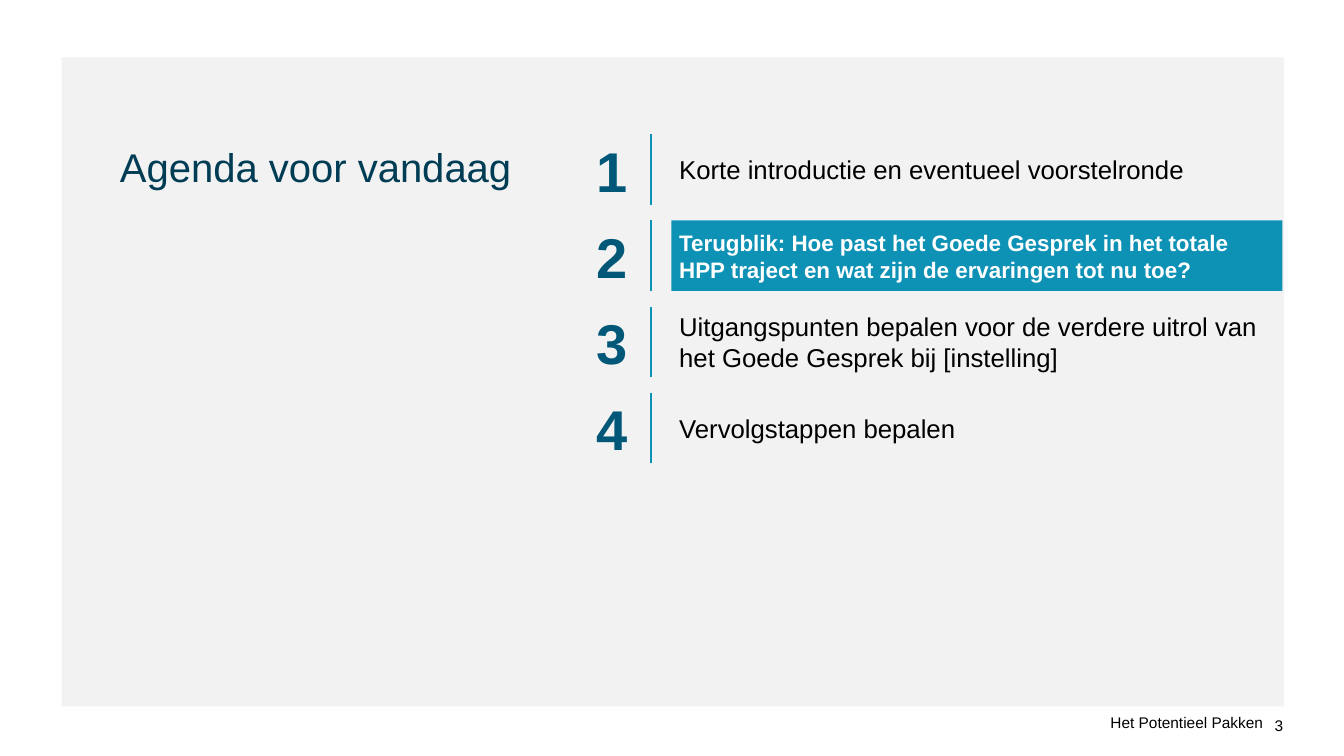
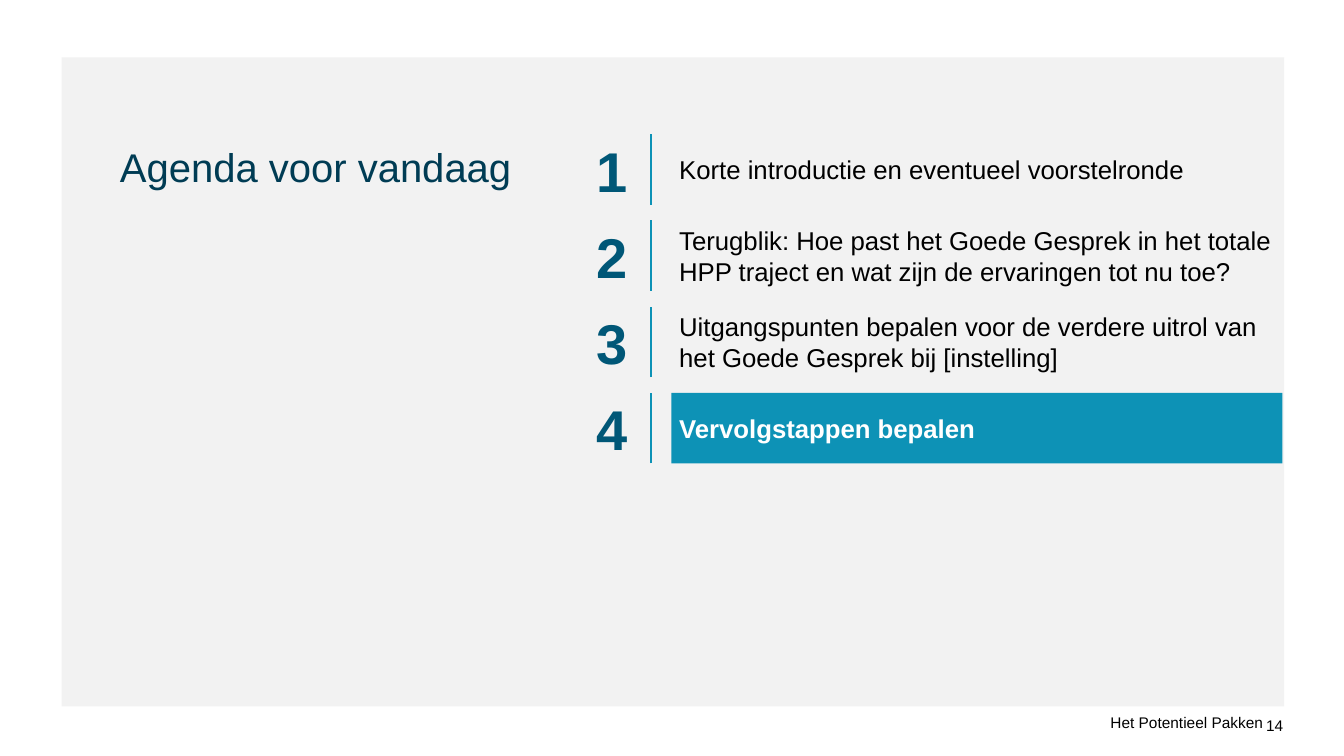
from pptx import Presentation
from pptx.dml.color import RGBColor
from pptx.enum.shapes import MSO_CONNECTOR, MSO_SHAPE
from pptx.enum.text import MSO_ANCHOR, MSO_AUTO_SIZE, PP_ALIGN
from pptx.oxml.ns import qn
from pptx.util import Pt
from lxml import etree

LEFT, CENTER, RIGHT = PP_ALIGN.LEFT, PP_ALIGN.CENTER, PP_ALIGN.RIGHT
TOP, MIDDLE, BOTTOM = MSO_ANCHOR.TOP, MSO_ANCHOR.MIDDLE, MSO_ANCHOR.BOTTOM
RECT, STRAIGHT = MSO_SHAPE.RECTANGLE, MSO_CONNECTOR.STRAIGHT
NO_FIT = MSO_AUTO_SIZE.NONE

FONT = "Arial"
COLORS = {"panel": "F2F2F2", "title": "003C54", "number": "005777",
          "accent": "0D92B6", "text": "000000", "active": "FFFFFF"}

ITEMS = [
    "Korte introductie en eventueel voorstelronde",
    "Terugblik: Hoe past het Goede Gesprek in het totale HPP traject "
    "en wat zijn de ervaringen tot nu toe?",
    "Uitgangspunten bepalen voor de verdere uitrol van het Goede Gesprek "
    "bij [instelling]",
    "Vervolgstappen bepalen",
]
# Page number, active item, size of the active text
PAGES = [("3", 2, 16), ("14", 4, 18.4)]

# Agenda rows
ROW_TOP, ROW_STEP, ROW_H = 95.9, 61.6, 50.3
NUM_X, NUM_W = 419.8, 35.3
LINE_X = 465.1
ITEM_X, ITEM_W = 479.5, 436.6


def write(shape, text, size, color, bold=False, align=LEFT, anchor=MIDDLE,
          inset=0, wrap=True):
    frame = shape.text_frame
    frame.auto_size = NO_FIT
    frame.word_wrap = wrap
    frame.vertical_anchor = anchor
    frame.margin_left = frame.margin_right = Pt(inset)
    frame.margin_top = frame.margin_bottom = Pt(inset)
    para = frame.paragraphs[0]
    para.alignment = align
    run = para.add_run()
    run.text = text
    run.font.name = FONT
    run.font.size = Pt(size)
    run.font.bold = bold
    run.font.color.rgb = RGBColor.from_string(COLORS[color])


def block(slide, x, y, w, h, fill):
    shape = slide.shapes.add_shape(RECT, Pt(x), Pt(y), Pt(w), Pt(h))
    shape.shadow.inherit = False
    shape.fill.solid()
    shape.fill.fore_color.rgb = RGBColor.from_string(COLORS[fill])
    shape.line.fill.background()
    return shape


deck = Presentation()
deck.slide_width, deck.slide_height = Pt(960), Pt(540)

for page, active, size in PAGES:
    slide = deck.slides.add_slide(deck.slide_layouts[5])
    shapes = slide.shapes

    # Panel behind the title
    title = shapes.title
    panel = block(slide, 44, 41, 873.3, 463.7, "panel")
    title._element.addprevious(panel._element)
    title.left, title.top = Pt(85.7), Pt(101.5)
    title.width, title.height = Pt(315.4), Pt(30.2)
    write(title, "Agenda voor vandaag", 28.6, "title", anchor=TOP)

    # Numbered agenda rows
    for i, item in enumerate(ITEMS):
        top = ROW_TOP + i * ROW_STEP
        num = shapes.add_textbox(Pt(NUM_X), Pt(top + 6.2), Pt(NUM_W), Pt(38.2))
        write(num, str(i + 1), 40, "number", True, CENTER, wrap=False)

        line = shapes.add_connector(STRAIGHT, Pt(LINE_X), Pt(top + ROW_H),
                                    Pt(LINE_X), Pt(top))
        line.line.color.rgb = RGBColor.from_string(COLORS["accent"])
        line.line.width = Pt(1.5)
        etree.SubElement(line._element.spPr, qn("a:effectLst"))

        if i + 1 == active:
            box = block(slide, ITEM_X, top, ITEM_W, ROW_H, "accent")
            write(box, item, size, "active", True, inset=5.67)
        else:
            box = shapes.add_textbox(Pt(ITEM_X), Pt(top), Pt(ITEM_W), Pt(ROW_H))
            write(box, item, 18.4, "text", inset=5.67)

    # Footer and page number
    foot = shapes.add_textbox(Pt(792.7), Pt(509), Pt(110.2), Pt(13.7))
    write(foot, "Het Potentieel Pakken", 11, "text", align=CENTER,
          anchor=BOTTOM, wrap=False)
    mark = shapes.add_textbox(Pt(896.4), Pt(511.2), Pt(20.2), Pt(13.7))
    write(mark, page, 11, "text", align=RIGHT, wrap=False)

deck.save("out.pptx")
